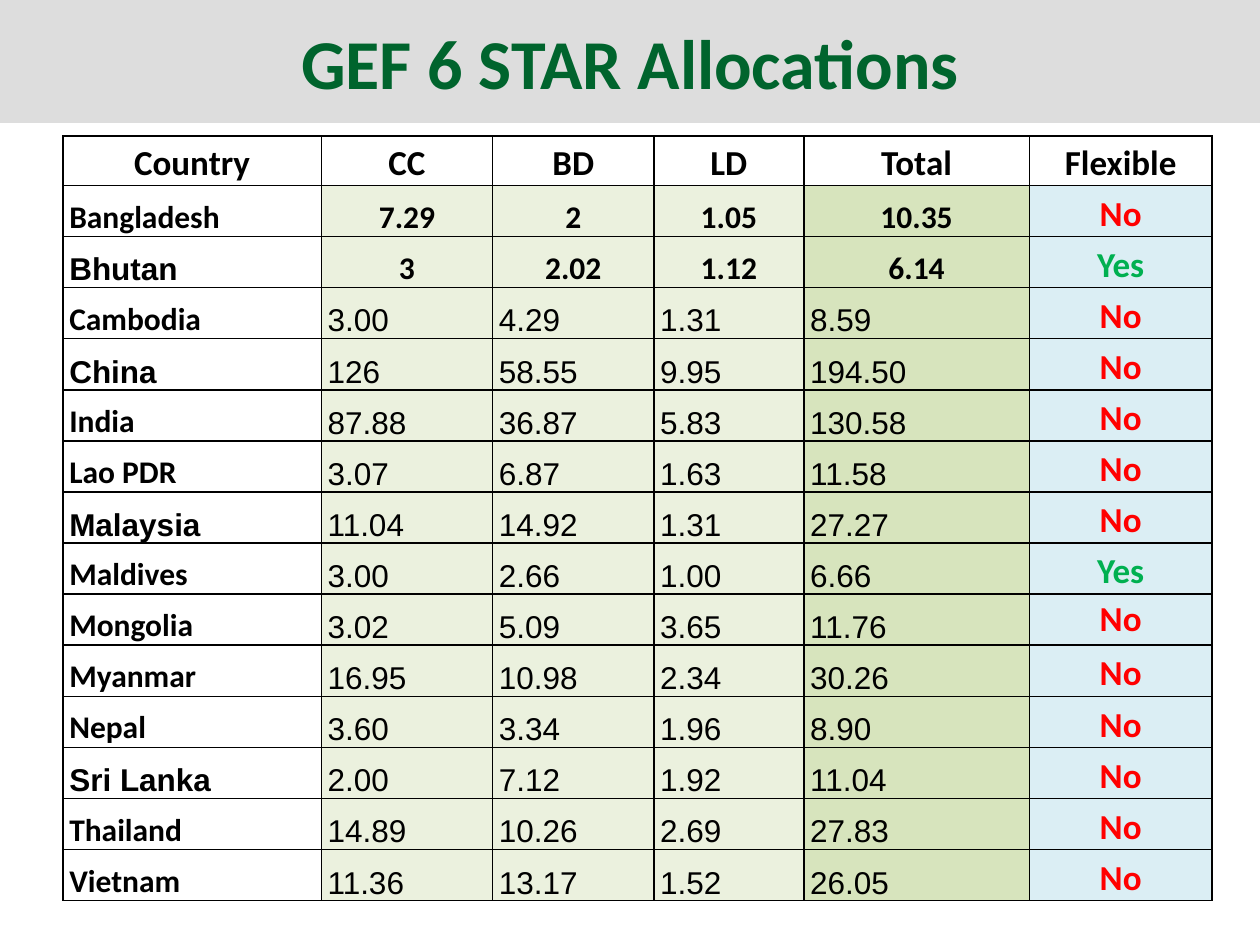
from dataclasses import dataclass

from lxml.etree import SubElement
from pptx import Presentation
from pptx.dml.color import RGBColor
from pptx.enum.shapes import MSO_SHAPE
from pptx.enum.text import MSO_ANCHOR as Anchor, PP_ALIGN as Align
from pptx.oxml.ns import qn
from pptx.util import Inches, Pt


@dataclass(frozen=True)
class Theme:
    heading_font: str = "Calibri"
    number_font: str = "Arial"
    title_size: int = 40
    large_size: int = 20
    body_size: int = 18
    line_spacing: float = 1.15
    border_width: int = 1
    band: str = "DDDDDD"
    title: str = "00642D"
    text: str = "000000"
    white: str = "FFFFFF"
    focal_area: str = "EBF1DE"
    total: str = "D7E4BD"
    flexible: str = "DBEEF4"
    no: str = "FF0000"
    yes: str = "00B050"


THEME = Theme()
WIDTH, HEIGHT = Inches(10), Inches(7.5)

# Shares of the slide's width and height
BAND_SHARE = 0.13
TABLE_LEFT, TABLE_TOP = 0.05, 0.144
COLUMN_SHARES = [0.205, 0.136, 0.128, 0.119, 0.179, 0.145]
HEADER_SHARE = 0.04
BODY_SHARE = 0.757

HEADINGS = ["Country", "CC", "BD", "LD", "Total", "Flexible"]
ALLOCATIONS = [
    ("Bangladesh", "7.29", "2", "1.05", "10.35", "No"),
    ("Bhutan", "3", "2.02", "1.12", "6.14", "Yes"),
    ("Cambodia", "3.00", "4.29", "1.31", "8.59", "No"),
    ("China", "126", "58.55", "9.95", "194.50", "No"),
    ("India", "87.88", "36.87", "5.83", "130.58", "No"),
    ("Lao PDR", "3.07", "6.87", "1.63", "11.58", "No"),
    ("Malaysia", "11.04", "14.92", "1.31", "27.27", "No"),
    ("Maldives", "3.00", "2.66", "1.00", "6.66", "Yes"),
    ("Mongolia", "3.02", "5.09", "3.65", "11.76", "No"),
    ("Myanmar", "16.95", "10.98", "2.34", "30.26", "No"),
    ("Nepal", "3.60", "3.34", "1.96", "8.90", "No"),
    ("Sri Lanka", "2.00", "7.12", "1.92", "11.04", "No"),
    ("Thailand", "14.89", "10.26", "2.69", "27.83", "No"),
    ("Vietnam", "11.36", "13.17", "1.52", "26.05", "No"),
]
ARIAL_COUNTRIES = {"Bhutan", "China", "Malaysia", "Sri Lanka"}
CENTRED_COUNTRIES = {"Bangladesh", "Bhutan"}
SINGLE_SPACED_ANSWERS = {"Mongolia"}
COLUMN_FILLS = [THEME.white, *[THEME.focal_area] * 3, THEME.total, THEME.flexible]


def write(paragraph, text, size, font=THEME.heading_font, color=THEME.text,
          bold=True, align=Align.LEFT, spacing=None):
    paragraph.alignment = align
    if spacing:
        paragraph.line_spacing = spacing
    run = paragraph.add_run()
    run.text = text
    run.font.name = font
    run.font.size = Pt(size)
    run.font.bold = bold
    run.font.color.rgb = RGBColor.from_string(color)


def add_borders(cell):
    properties = cell._tc.get_or_add_tcPr()
    for position, side in enumerate(("lnL", "lnR", "lnT", "lnB")):
        line = properties.makeelement(qn(f"a:{side}"), {"w": str(Pt(THEME.border_width))})
        fill = SubElement(line, qn("a:solidFill"))
        SubElement(fill, qn("a:srgbClr"), val=THEME.text)
        properties.insert(position, line)


def fill_cell(cell, text, fill, anchor=Anchor.BOTTOM, **style):
    cell.margin_left = cell.margin_right = Inches(0.05)
    cell.margin_top = cell.margin_bottom = 0
    cell.vertical_anchor = anchor
    cell.fill.solid()
    cell.fill.fore_color.rgb = RGBColor.from_string(fill)
    add_borders(cell)
    write(cell.text_frame.paragraphs[0], text, **style)


def body_style(country, column, text):
    """Return the cell style for one column of a country's row."""
    if column == 0:
        font = THEME.number_font if country in ARIAL_COUNTRIES else THEME.heading_font
        return dict(size=THEME.body_size, font=font, spacing=THEME.line_spacing)
    if column == len(HEADINGS) - 1:
        spacing = None if country in SINGLE_SPACED_ANSWERS else THEME.line_spacing
        return dict(size=THEME.large_size, color=THEME.yes if text == "Yes" else THEME.no,
                    align=Align.CENTER, anchor=Anchor.MIDDLE, spacing=spacing)
    if country in CENTRED_COUNTRIES:
        return dict(size=THEME.body_size, align=Align.CENTER, spacing=THEME.line_spacing)
    return dict(size=THEME.body_size, font=THEME.number_font, bold=False)


def add_allocation_table(slide):
    frame = slide.shapes.add_table(
        len(ALLOCATIONS) + 1, len(HEADINGS),
        int(WIDTH * TABLE_LEFT), int(HEIGHT * TABLE_TOP),
        int(WIDTH * sum(COLUMN_SHARES)), int(HEIGHT * (HEADER_SHARE + BODY_SHARE)))
    table = frame.table
    table.first_row = table.horz_banding = False
    for column, share in zip(table.columns, COLUMN_SHARES):
        column.width = int(WIDTH * share)
    for index, row in enumerate(table.rows):
        share = BODY_SHARE / len(ALLOCATIONS) if index else HEADER_SHARE
        row.height = int(HEIGHT * share)

    for column, heading in enumerate(HEADINGS):
        fill_cell(table.cell(0, column), heading, THEME.white,
                  anchor=Anchor.MIDDLE if column else Anchor.BOTTOM,
                  size=THEME.large_size, align=Align.CENTER, spacing=THEME.line_spacing)
    for row, allocation in enumerate(ALLOCATIONS, start=1):
        for column, text in enumerate(allocation):
            fill_cell(table.cell(row, column), text, COLUMN_FILLS[column],
                      **body_style(allocation[0], column, text))


def add_title_band(slide, text):
    band = slide.shapes.add_shape(MSO_SHAPE.RECTANGLE, 0, 0, WIDTH, int(HEIGHT * BAND_SHARE))
    band.shadow.inherit = False
    band.fill.solid()
    band.fill.fore_color.rgb = RGBColor.from_string(THEME.band)
    band.line.fill.background()
    band.text_frame.word_wrap = True
    band.text_frame.vertical_anchor = Anchor.MIDDLE
    write(band.text_frame.paragraphs[0], text, THEME.title_size,
          color=THEME.title, align=Align.CENTER)


def main():
    presentation = Presentation()
    presentation.slide_width, presentation.slide_height = WIDTH, HEIGHT
    slide = presentation.slides.add_slide(presentation.slide_layouts[6])
    add_allocation_table(slide)
    add_title_band(slide, "GEF 6 STAR Allocations")
    presentation.save("out.pptx")


if __name__ == "__main__":
    main()
